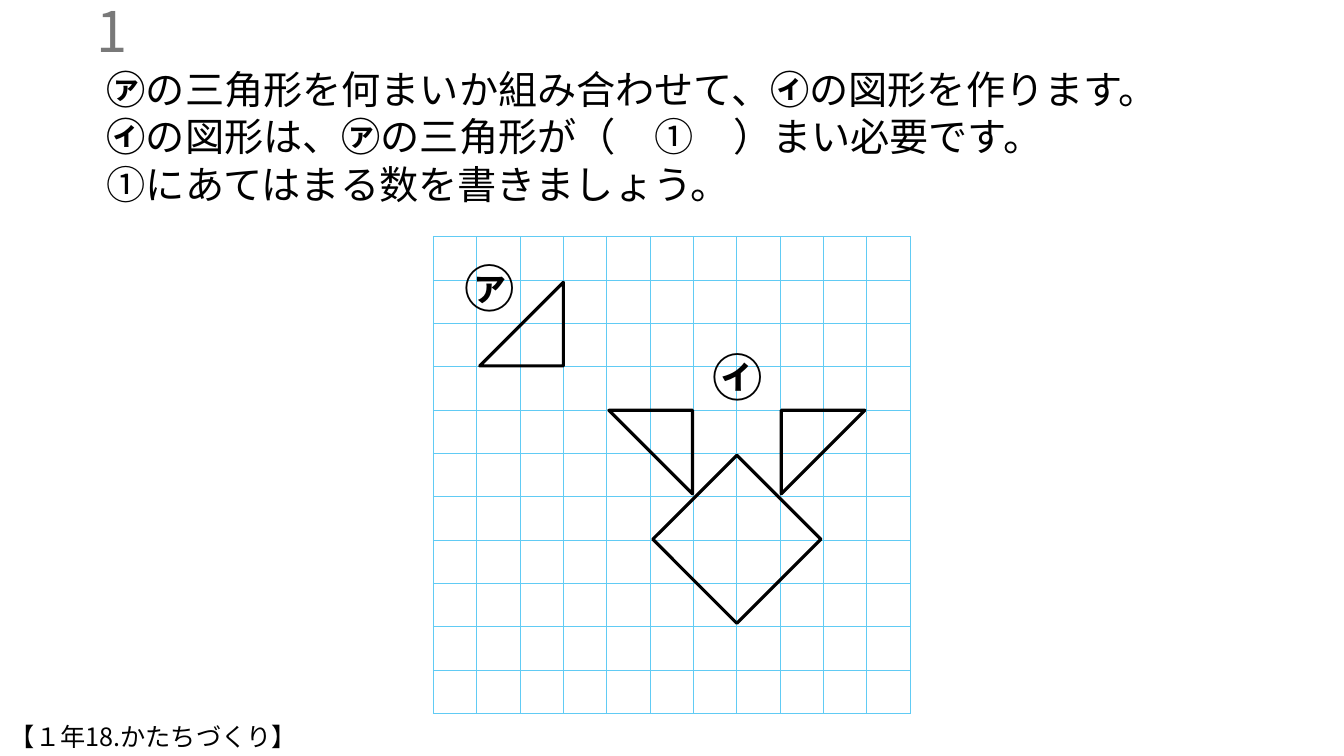
from lxml import etree
from pptx import Presentation
from pptx import util as u
from pptx.dml.color import RGBColor
from pptx.enum import shapes, text
from pptx.oxml import ns

PX = 9144
CELL = 43
COLORS = {"ink": "000000", "number": "797979", "grid": "61CBF4"}
NOTO = "Noto Sans CJK JP"


def write(paragraph, words, size=28, color="ink", bold=False, font=NOTO):
    run = paragraph.add_run()
    run.text = words
    run.font.size = u.Pt(size)
    run.font.bold = bold
    run.font.name = font
    run.font.color.rgb = RGBColor.from_string(COLORS[color])
    latin = run._r.rPr.find(ns.qn("a:latin"))
    latin.addnext(latin.makeelement(ns.qn("a:ea"), {"typeface": NOTO}))


class Worksheet:
    """Draws the parts of a geometry question on one slide."""

    def __init__(self, deck):
        self.slide = deck.slides.add_slide(deck.slide_layouts[1])

    def place(self, part, left, top, width, height):
        part.left, part.top, part.width, part.height = (
            n * PX for n in (left, top, width, height))

    def lines(self, part, rows, anchor=text.MSO_ANCHOR.TOP,
              align=text.PP_ALIGN.LEFT, pitch=None, **style):
        frame = part.text_frame
        frame.word_wrap = True
        frame.auto_size = text.MSO_AUTO_SIZE.NONE
        frame.vertical_anchor = anchor
        for index, row in enumerate(rows):
            paragraph = frame.add_paragraph() if index else frame.paragraphs[0]
            properties = paragraph._p.get_or_add_pPr()
            properties.set("marL", "0")
            properties.set("indent", "0")
            etree.SubElement(properties, ns.qn("a:buNone"))
            paragraph.alignment = align
            paragraph.space_before = u.Pt(0)
            if pitch:
                paragraph.line_spacing = u.Pt(pitch)
            for words, changes in row:
                write(paragraph, words, **{**style, **changes})

    def placeholder(self, index, box, rows, **style):
        part = self.slide.placeholders[index]
        self.place(part, *box)
        self.lines(part, rows, **style)

    def label(self, box, row, **style):
        part = self.slide.shapes.add_textbox(*(n * PX for n in box))
        self.lines(part, [row], **style)

    def grid(self, left, top, count):
        side = count * CELL * PX
        squares = self.slide.shapes.add_table(
            count, count, left * PX, top * PX, side, side).table
        squares.first_row = squares.horz_banding = False
        for track in [*squares.columns]:
            track.width = CELL * PX
        for track in [*squares.rows]:
            track.height = CELL * PX
        for cell in squares.iter_cells():
            cell.margin_top = cell.margin_bottom = 0
            properties = cell._tc.get_or_add_tcPr()
            for edge in ("lnL", "lnR", "lnT", "lnB"):
                border = etree.SubElement(
                    properties, ns.qn(f"a:{edge}"), w=str(u.Pt(1)))
                fill = etree.SubElement(border, ns.qn("a:solidFill"))
                etree.SubElement(fill, ns.qn("a:srgbClr"), val=COLORS["grid"])
            cell.fill.background()

    def outline(self, kind, left, top, side, rotation):
        part = self.slide.shapes.add_shape(
            kind, *(n * PX for n in (left, top, side, side)))
        part.rotation = rotation
        part.shadow.inherit = False
        part.fill.background()
        part.line.color.rgb = RGBColor.from_string(COLORS["ink"])
        part.line.width = u.Pt(2.25)


def main():
    deck = Presentation()
    deck.slide_width, deck.slide_height = u.Inches(13.333), u.Inches(7.5)
    sheet = Worksheet(deck)
    bold = {"bold": True}
    piece, figure = ("㋐", bold), ("㋑", bold)

    sheet.placeholder(1, (96, 59, 1153, 151), [
        [piece, ("の三角形を何まいか組み合わせて、", {}), figure,
         ("の図形を作ります。", {})],
        [figure, ("の図形は、", {}), piece,
         ("の三角形が（　①　）まい必要です。", {})],
        [("①にあてはまる数を書きましょう。", {})],
    ], pitch=34)
    sheet.placeholder(0, (-163, 10, 300, 40), [[("1", {})]],
                      anchor=text.MSO_ANCHOR.MIDDLE,
                      align=text.PP_ALIGN.RIGHT, size=40, color="number")

    sheet.grid(430, 235, 11)
    for left, top, name in ((451, 249, piece), (697, 337, figure)):
        sheet.label((left, top, 64, 71), [name], size=36, pitch=44)

    triangle = shapes.MSO_SHAPE.RIGHT_TRIANGLE
    for left, top, rotation in ((476, 280, 270), (604, 407, 180),
                                (775, 407, 90)):
        sheet.outline(triangle, left, top, 83, rotation)
    sheet.outline(shapes.MSO_SHAPE.RECTANGLE, 672, 476, 118, 45)

    sheet.label((0, 710, 749, 40), [
        ("【１年", {"font": "Arial"}), ("18.", {}),
        ("かたちづくり】", {"font": "Arial"})], size=18, pitch=22)
    deck.save("out.pptx")


if __name__ == "__main__":
    main()
